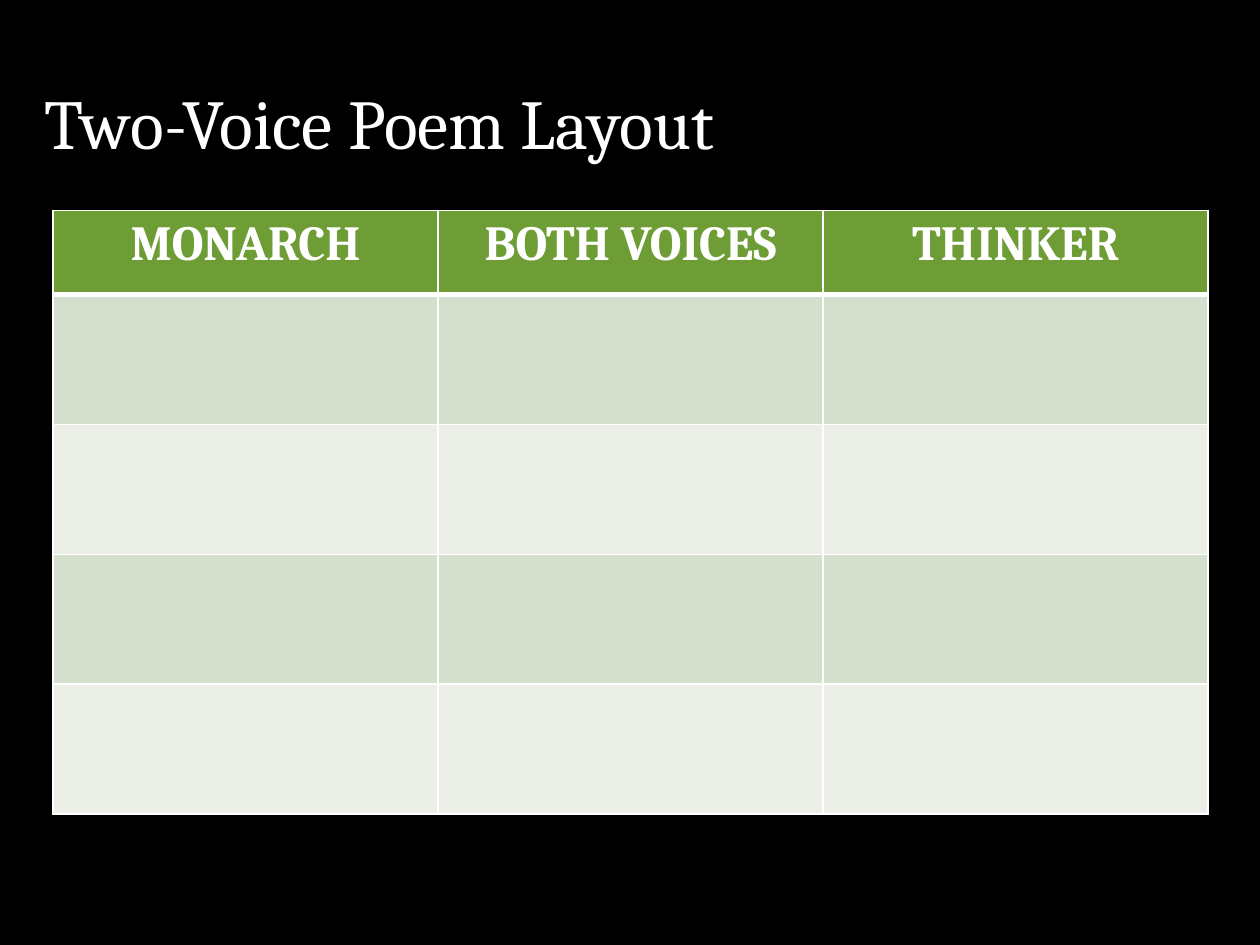
from pptx import Presentation
from pptx.dml.color import RGBColor
from pptx.enum.text import MSO_ANCHOR, PP_ALIGN
from pptx.oxml import parse_xml
from pptx.oxml.ns import nsdecls
from pptx.util import Inches, Pt

BLACK = RGBColor(0x00, 0x00, 0x00)
WHITE = RGBColor(0xFF, 0xFF, 0xFF)
GREEN = RGBColor(0x6E, 0x9D, 0x35)
SAGE = RGBColor(0xD5, 0xDF, 0xCE)
PALE = RGBColor(0xEB, 0xEF, 0xE8)

VOICES = ["MONARCH", "BOTH VOICES", "THINKER"]
BANDS = 4


class Deck:
    font = "Cambria"

    def __init__(self, slide):
        self.slide = slide
        fill = slide.background.fill
        fill.solid()
        fill.fore_color.rgb = BLACK

    def add_text(self, para, text, size, bold=False):
        run = para.add_run()
        run.text = text
        run.font.name = self.font
        run.font.size = Pt(size)
        run.font.bold = bold
        run.font.color.rgb = WHITE

    def title(self, text, left, top, width, height):
        box = self.slide.shapes.title
        box.left, box.top = Inches(left), Inches(top)
        box.width, box.height = Inches(width), Inches(height)
        frame = box.text_frame
        frame.word_wrap = True
        frame.vertical_anchor = MSO_ANCHOR.BOTTOM
        para = frame.paragraphs[0]
        para.alignment = PP_ALIGN.LEFT
        para.line_spacing = 0.8
        self.add_text(para, text, 40)

    def edge(self, cell, side, width):
        props = cell._tc.get_or_add_tcPr()
        props.append(parse_xml(
            f'<a:ln{side} {nsdecls("a")} w="{Pt(width)}"><a:solidFill>'
            f'<a:srgbClr val="{WHITE}"/></a:solidFill></a:ln{side}>'))

    def table(self, heads, bands, left, top, width, head, band):
        frame = self.slide.shapes.add_table(
            bands + 1, len(heads), Inches(left), Inches(top),
            Inches(width), Inches(head + bands * band))
        grid = frame.table
        for col in grid.columns:
            col.width = Inches(width / len(heads))
        for i, row in enumerate(grid.rows):
            row.height = Inches(band if i else head)
            tint = (SAGE if i % 2 else PALE) if i else GREEN
            # A thick rule parts the header from the bands
            rules = {"L": 1, "R": 1, "T": 3 if i == 1 else 1,
                     "B": 1 if i else 3}
            for cell in row.cells:
                for side, size in rules.items():
                    self.edge(cell, side, size)
                cell.fill.solid()
                cell.fill.fore_color.rgb = tint
        # Header text
        for cell, text in zip(grid.rows[0].cells, heads):
            para = cell.text_frame.paragraphs[0]
            para.alignment = PP_ALIGN.CENTER
            self.add_text(para, text, 28, True)


def main():
    prs = Presentation()
    prs.slide_width, prs.slide_height = Inches(10), Inches(7.5)
    deck = Deck(prs.slides.add_slide(prs.slide_layouts[5]))

    # Title
    deck.title("Two-Voice Poem Layout", 0.25, 0.42, 8.69, 0.92)

    # Poem grid, one column for each voice
    deck.table(VOICES, BANDS, 0.42, 1.67, 9.17, 0.67, 1.03)

    prs.save("out.pptx")


if __name__ == "__main__":
    main()
